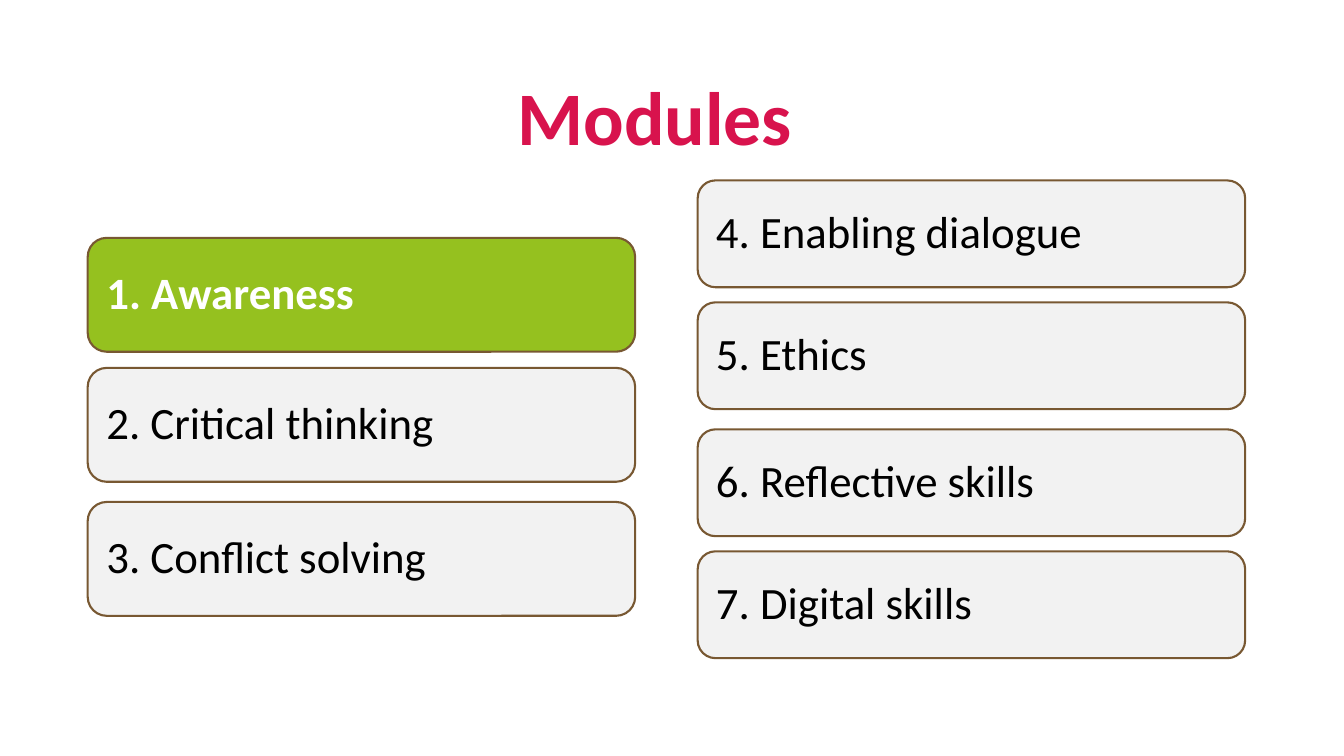
from dataclasses import dataclass

from pptx import Presentation
from pptx.dml.color import RGBColor
from pptx.enum.shapes import MSO_SHAPE as Shape
from pptx.enum.text import MSO_ANCHOR as Anchor, PP_ALIGN as Align
from pptx.util import Inches, Pt


@dataclass(frozen=True)
class Theme:
    """Colours, font and type sizes of the slide."""
    font: str = "Calibri"
    heading: str = "D8134D"
    active: str = "95C11F"
    active_text: str = "FFFFFF"
    idle: str = "F2F2F2"
    idle_text: str = "000000"
    outline: str = "785832"
    heading_size: int = 54
    module_size: int = 32


def write_text(frame, text, *, font, size, color, bold=False,
               align=Align.LEFT, anchor=Anchor.MIDDLE, inset=None):
    """Fill a text frame with one formatted paragraph."""
    frame.word_wrap = True
    frame.vertical_anchor = anchor
    if inset is not None:
        frame.margin_left = frame.margin_right = Inches(inset)
        frame.margin_top = frame.margin_bottom = Inches(inset)
    paragraph = frame.paragraphs[0]
    paragraph.alignment = align
    paragraph.line_spacing = 0.9
    run = paragraph.add_run()
    run.text = text
    run.font.name = font
    run.font.size = Pt(size)
    run.font.bold = bold
    run.font.color.rgb = RGBColor.from_string(color)


class ModuleSlide:
    """Draws headings and module cards in one theme."""

    def __init__(self, slide, theme):
        """Keep the slide and its theme."""
        self.slide = slide
        self.theme = theme

    def heading(self, text, left, top, width, height):
        """Add the centred slide heading."""
        heading = self.slide.shapes.add_textbox(
            Inches(left), Inches(top), Inches(width), Inches(height))
        write_text(heading.text_frame, text, font=self.theme.font,
                   size=self.theme.heading_size, color=self.theme.heading,
                   bold=True, align=Align.CENTER, anchor=Anchor.BOTTOM)

    def card(self, text, left, top, width, height, active=False):
        """Add one module card, highlighted when active."""
        theme = self.theme
        card = self.slide.shapes.add_shape(
            Shape.ROUNDED_RECTANGLE,
            Inches(left), Inches(top), Inches(width), Inches(height))
        card.shadow.inherit = False
        card.fill.solid()
        card.fill.fore_color.rgb = RGBColor.from_string(
            theme.active if active else theme.idle)
        card.line.color.rgb = RGBColor.from_string(theme.outline)
        card.line.width = Pt(1.5)
        write_text(card.text_frame, text, font=theme.font,
                   size=theme.module_size, bold=active, inset=0.13,
                   color=theme.active_text if active else theme.idle_text)


CARD_WIDTH = 5.43
ACTIVE_MODULE = 1
COLUMNS = [
    (0.87, 1.13, [(2.36, "Awareness"), (3.65, "Critical thinking"),
                  (4.98, "Conflict solving")]),
    (6.92, 1.06, [(1.79, "Enabling dialogue"), (3, "Ethics"),
                  (4.26, "Reflective skills"), (5.47, "Digital skills")]),
]


def main():
    """Build and save the modules slide."""
    deck = Presentation()
    deck.slide_width, deck.slide_height = Inches(13.33), Inches(7.5)
    page = ModuleSlide(deck.slides.add_slide(deck.slide_layouts[6]), Theme())
    page.heading("Modules", 0.01, 0, 12.97, 1.65)
    number = 0
    for left, height, modules in COLUMNS:
        for top, module in modules:
            number += 1
            page.card(f"{number}. {module}", left, top, CARD_WIDTH, height,
                      active=number == ACTIVE_MODULE)
    deck.save("out.pptx")


if __name__ == "__main__":
    main()
